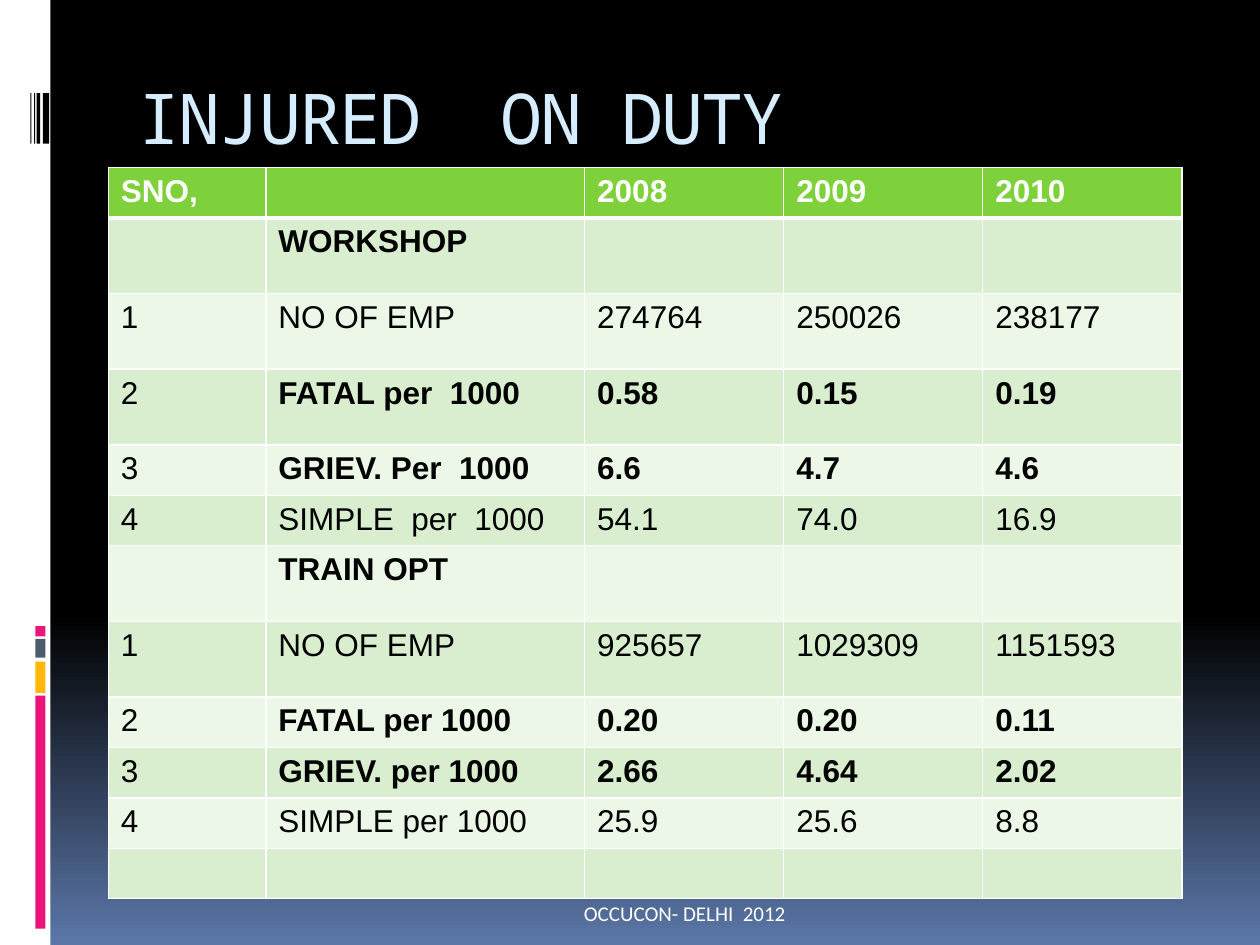
from typing import NamedTuple

from lxml import etree
from pptx import Presentation
from pptx.dml.color import RGBColor
from pptx.enum.shapes import MSO_SHAPE
from pptx.enum.text import MSO_ANCHOR, PP_ALIGN
from pptx.oxml.ns import qn
from pptx.util import Inches, Pt

RECT = MSO_SHAPE.RECTANGLE
TOP = MSO_ANCHOR.TOP
LEFT, CENTER = PP_ALIGN.LEFT, PP_ALIGN.CENTER

WHITE, BLACK, PINK = "FFFFFF", "000000", "EA157A"
GREEN, DARK, PALE = "7FD13B", "D8EECE", "ECF7E8"
TALL, SHORT, EDGE = 0.6, 0.38, 0.4


class Bar(NamedTuple):
    left: float
    top: float
    width: float
    height: float
    fill: str


class Row(NamedTuple):
    height: float
    bold: bool
    texts: tuple[str, ...]


class Label(NamedTuple):
    box: tuple[float, float, float, float]
    text: str
    size: float
    font: str
    color: str
    align: PP_ALIGN
    wrap: bool


BARS = [
    Bar(0, 0, 0.4, 7.5, WHITE),
    # Stacked accents
    Bar(0.28, 5.52, 0.08, 1.85, PINK),
    Bar(0.28, 5.25, 0.08, 0.25, "FEB80A"),
    Bar(0.28, 5.07, 0.08, 0.15, "4E5B6F"),
    Bar(0.28, 4.97, 0.08, 0.08, PINK),
    # Upright stripes
    *(Bar(left, 0.74, width, 0.4, BLACK)
      for left, width in ((0.34, 0.05), (0.29, 0.03), (0.27, 0.01), (0.24, 0.01))),
]

TITLE = Label((1, 0.54, 8.5, 1), "INJURED  ON DUTY", 40,
              "Noto Sans Mono", "D6ECFF", LEFT, True)
FOOTER = Label((4.48, 7.1, 1.91, 0.3), "OCCUCON- DELHI  2012", 12,
               "Calibri", WHITE, CENTER, False)

COLS = (1.25, 2.53, 1.58, 1.58, 1.58)
ROWS = [
    Row(EDGE, True, ("SNO,", "", "2008", "2009", "2010")),
    Row(TALL, True, ("", "WORKSHOP", "", "", "")),
    Row(TALL, False, ("1", "NO OF EMP", "274764", "250026", "238177")),
    Row(TALL, True, ("2", "FATAL per  1000", "0.58", "0.15", "0.19")),
    Row(SHORT, True, ("3", "GRIEV. Per  1000", "6.6", "4.7", "4.6")),
    Row(SHORT, False, ("4", "SIMPLE  per  1000", "54.1", "74.0", "16.9")),
    Row(TALL, True, ("", "TRAIN OPT", "", "", "")),
    Row(TALL, False, ("1", "NO OF EMP", "925657", "1029309", "1151593")),
    Row(SHORT, True, ("2", "FATAL per 1000", "0.20", "0.20", "0.11")),
    Row(SHORT, True, ("3", "GRIEV. per 1000", "2.66", "4.64", "2.02")),
    Row(SHORT, False, ("4", "SIMPLE per 1000", "25.9", "25.6", "8.8")),
    Row(EDGE, False, ("",) * 5),
]


def rgb(code: str) -> RGBColor:
    return RGBColor.from_string(code)


def add_run(para, text: str, size: float, font: str, color: str,
            bold: bool = False) -> None:
    run = para.add_run()
    run.text = text
    run.font.size = Pt(size)
    run.font.name = font
    run.font.bold = bold
    run.font.color.rgb = rgb(color)
    return run


def add_bar(slide, bar: Bar) -> None:
    shape = slide.shapes.add_shape(RECT, *map(Inches, bar[:4]))
    shape.shadow.inherit = False
    shape.fill.solid()
    shape.fill.fore_color.rgb = rgb(bar.fill)
    shape.line.fill.background()


def add_label(slide, label: Label, spacing: int = 0) -> None:
    frame = slide.shapes.add_textbox(*map(Inches, label.box)).text_frame
    frame.word_wrap = label.wrap
    frame.vertical_anchor = TOP
    para = frame.paragraphs[0]
    para.alignment = label.align
    run = add_run(para, label.text, label.size, label.font, label.color)
    if spacing:
        run.font._element.set("spc", str(spacing))


def set_edges(cell, widths: dict[str, float]) -> None:
    """Draw white cell borders; they must stand before the fill."""
    props = cell._tc.get_or_add_tcPr()
    for place, (side, width) in enumerate(widths.items()):
        line = etree.Element(qn(f"a:ln{side}"), w=str(Pt(width)))
        fill = etree.SubElement(line, qn("a:solidFill"))
        etree.SubElement(fill, qn("a:srgbClr"), val=WHITE)
        props.insert(place, line)


def add_grid(slide) -> None:
    height = sum(row.height for row in ROWS)
    grid = slide.shapes.add_table(
        len(ROWS), len(COLS), Inches(0.86), Inches(1.33),
        Inches(sum(COLS)), Inches(height)).table
    for col, width in zip(grid.columns, COLS):
        col.width = Inches(width)
    for r, row in enumerate(ROWS):
        grid.rows[r].height = Inches(row.height)
        head = r == 0
        shade = GREEN if head else DARK if r % 2 else PALE
        for c, text in enumerate(row.texts):
            cell = grid.cell(r, c)
            cell.fill.solid()
            cell.fill.fore_color.rgb = rgb(shade)
            set_edges(cell, {"L": 1, "R": 1, "T": 3 if r == 1 else 1,
                             "B": 3 if head else 1})
            if text:
                # Serial numbers stay light below the header
                bold = row.bold and (head or c > 0)
                add_run(cell.text_frame.paragraphs[0], text, 18, "Arial",
                        WHITE if head else BLACK, bold)


def main() -> None:
    deck = Presentation()
    deck.slide_width, deck.slide_height = Inches(10), Inches(7.5)
    slide = deck.slides.add_slide(deck.slide_layouts[6])

    # Background: black fading to blue at the foot
    fill = slide.background.fill
    fill.gradient()
    fill.gradient_angle = 270
    for stop, (place, code) in zip(fill.gradient_stops,
                                   ((0.65, BLACK), (1, "5B77A8"))):
        stop.position = place
        stop.color.rgb = rgb(code)

    # Side band
    for bar in BARS:
        add_bar(slide, bar)

    # Title, table and footer
    add_label(slide, TITLE, spacing=-100)
    add_grid(slide)
    add_label(slide, FOOTER)
    deck.save("out.pptx")


if __name__ == "__main__":
    main()
